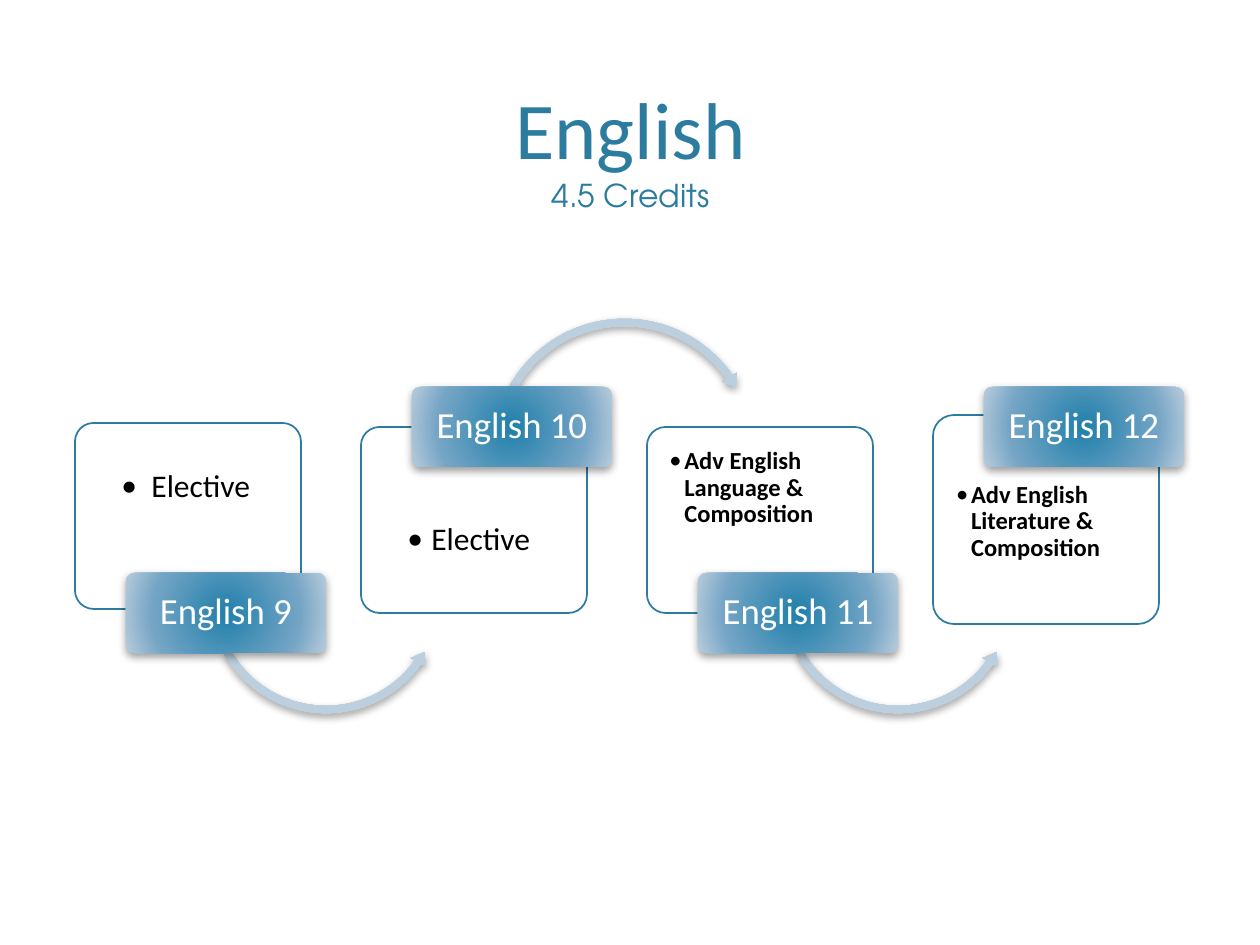
from pptx import Presentation
from pptx import util as u
from pptx.dml.color import RGBColor
from pptx.enum import shapes, text
from pptx.oxml import parse_xml
from pptx.oxml.ns import nsdecls, qn

SCALE = 914400 / 126
HUES = {"teal": "2C7C9F", "white": "FFFFFF", "black": "000000"}
TAG = ((0, "2080AB"), (69, "75A5C5"), (100, "B8CCDC"))
ARC = ((0, "AABFD0"), (69, "BCCFDE"), (100, "D8E2EB"))
KIND = shapes.MSO_SHAPE
DOWN = (KIND.LEFT_CIRCULAR_ARROW, 129, 474, 244, (0.03, 3.692, 21.447, 90.245, 0.035))
OVER = (KIND.CIRCULAR_ARROW, 127, 314, 273, (0.027, 3.279, 194.965, 125.755, 0.031))
LOOSE = {"size": 18, "bold": False}
TIGHT = {"size": 14, "bold": True}
STAGES = (
    ("English 9", 573, "Elective", LOOSE, (423, 186), 42, (54, 30), DOWN),
    ("English 10", 387, "Elective", LOOSE, (427, 186), 91, (48, 24), OVER),
    ("English 11", 573, "Adv English Language & Composition", TIGHT, (427, 186), 16, (15, 15), DOWN),
    ("English 12", 387, "Adv English Literature & Composition", TIGHT, (415, 209), 61, (15, 15), None),
)


def px(n):
    """Turn pixels into EMU."""
    return u.Emu(round(n * SCALE))


def rgb(name):
    """Look up a named colour."""
    return RGBColor.from_string(HUES[name])


def put(obj, **vals):
    """Set several attributes on an object."""
    for key, val in vals.items():
        setattr(obj, key, val)


def write(para, words, hue, size, face="Calibri", bold=False):
    """Add a styled run to a paragraph."""
    run = para.add_run()
    run.text = words
    put(run.font, name=face, size=u.Pt(size), bold=bold)
    run.font.color.rgb = rgb(hue)


def frame(shape, pads, anchor, align):
    """Set up a shape's text and return its first paragraph."""
    left, top, right, bottom = map(px, pads)
    put(shape.text_frame, word_wrap=True, vertical_anchor=anchor, margin_left=left,
        margin_top=top, margin_right=right, margin_bottom=bottom)
    para = shape.text_frame.paragraphs[0]
    put(para, alignment=align, line_spacing=0.9)
    return para


def shape(slide, kind, box, adj):
    """Add a preset shape with its adjustments and no shadow."""
    item = slide.shapes.add_shape(kind, *map(px, box))
    for i, val in enumerate(adj):
        item.adjustments[i] = val
    item.shadow.inherit = False
    return item


def glow(item, stops):
    """Give a shape a radial gradient, no outline and a soft shadow."""
    marks = "".join(
        f'<a:gs pos="{pos * 1000}"><a:srgbClr val="{hue}"/></a:gs>' for pos, hue in stops)
    props = item.fill._xPr
    effect = props.find(qn("a:effectLst"))
    effect.addprevious(parse_xml(
        f'<a:gradFill {nsdecls("a")} rotWithShape="1"><a:gsLst>{marks}</a:gsLst>'
        '<a:path path="circle"><a:fillToRect l="100000" t="100000" r="100000" b="100000"/>'
        '</a:path></a:gradFill>'))
    item.line.fill.background()
    effect.append(parse_xml(
        f'<a:outerShdw {nsdecls("a")} blurRad="63500" dist="25400" dir="5400000" '
        f'rotWithShape="0"><a:srgbClr val="{HUES["black"]}"><a:alpha val="40000"/>'
        '</a:srgbClr></a:outerShdw>'))


def card(slide, box, words, style, top, dents):
    """Add an outlined card with one bulleted line."""
    item = shape(slide, KIND.ROUNDED_RECTANGLE, box, [0.1])
    item.fill.solid()
    item.fill.fore_color.rgb = rgb("white")
    item.line.color.rgb = rgb("teal")
    item.line.width = u.Pt(1)
    para = frame(item, (17, top, 17, 17), text.MSO_ANCHOR.TOP, text.PP_ALIGN.LEFT)
    write(para, words, "black", **style)
    props = para._p.get_or_add_pPr()
    props.set("marL", str(px(dents[0])))
    props.set("indent", str(-px(dents[1])))
    for mark in ('buFont {} typeface="Calibri"', 'buChar {} char="•"'):
        props.append(parse_xml(f'<a:{mark.format(nsdecls("a"))}/>'))


def tag(slide, box, words):
    """Add a shaded course label."""
    item = shape(slide, KIND.ROUNDED_RECTANGLE, box, [0.1])
    glow(item, TAG)
    para = frame(item, (5, 4, 5, 4), text.MSO_ANCHOR.MIDDLE, text.PP_ALIGN.CENTER)
    write(para, words, "white", 21)


def title(slide):
    """Fill the title placeholder."""
    item = slide.shapes.title
    put(item, left=px(76), top=px(50), width=px(1109), height=px(170))
    put(item.text_frame, vertical_anchor=text.MSO_ANCHOR.BOTTOM, word_wrap=True)
    para = item.text_frame.paragraphs[0]
    para.alignment = text.PP_ALIGN.CENTER
    write(para, "English", "teal", 46)
    para.add_line_break()
    write(para, "4.5 Credits", "teal", 18, "TeX Gyre Adventor")


def main():
    """Build the English course path."""
    deck = Presentation()
    put(deck, slide_width=px(1260), slide_height=px(945))
    slide = deck.slides.add_slide(deck.slide_layouts[5])
    title(slide)
    for i, (name, y, words, style, span, top, dents, arc) in enumerate(STAGES):
        x = 75 + 286 * i
        card(slide, (x, span[0], 226, span[1]), words, style, top, dents)
        if arc:
            kind, dx, rise, size, adj = arc
            glow(shape(slide, kind, (x + dx, rise, size, size), adj), ARC)
        tag(slide, (x + 51, y, 200, 80), name)
    deck.save("out.pptx")


if __name__ == "__main__":
    main()
